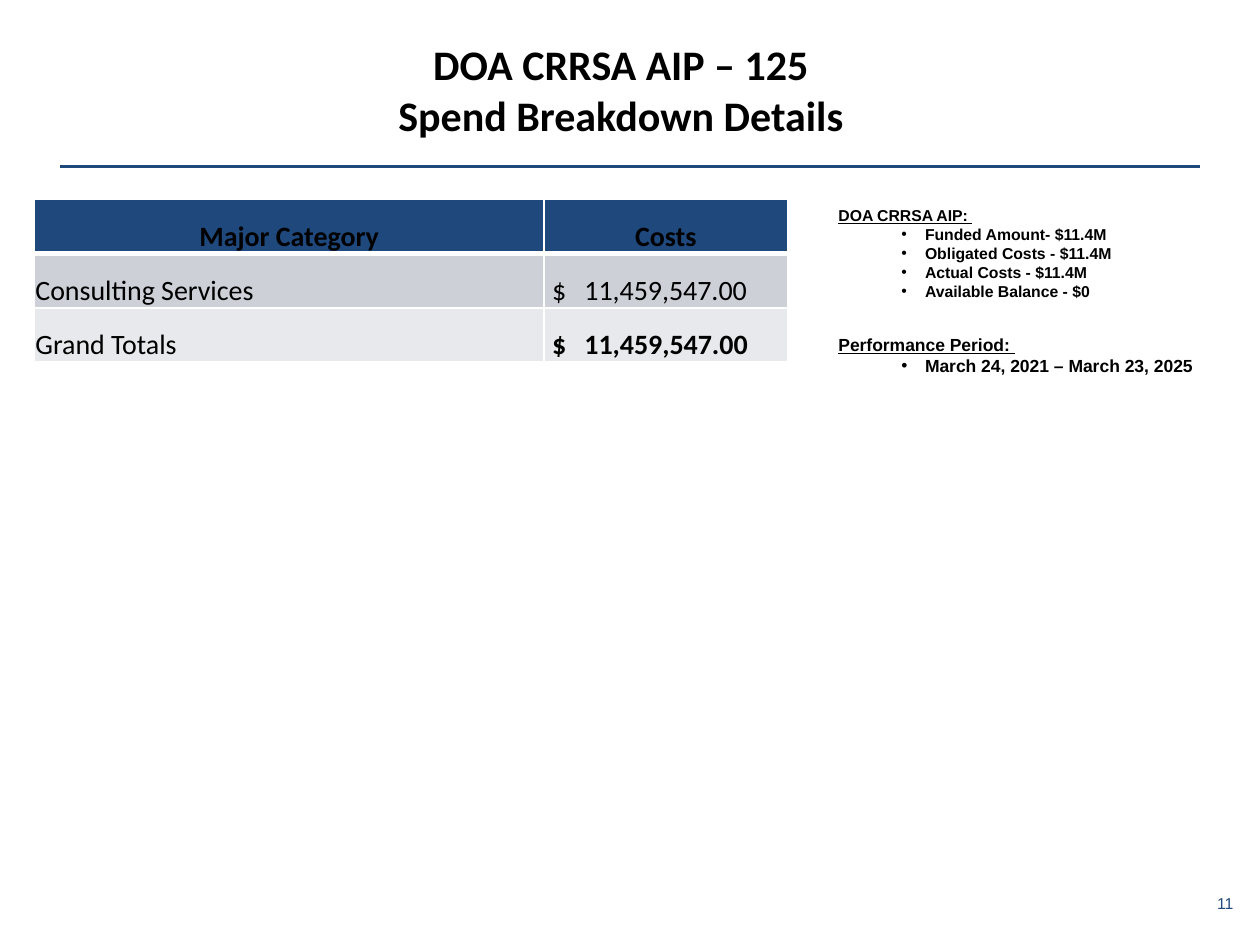
from lxml import etree
from pptx import Presentation
from pptx import util as u
from pptx.dml.color import RGBColor
from pptx.enum import shapes, text
from pptx.oxml.ns import qn

Pt = u.Pt
NAVY, BLACK, WHITE = "1F497D", "000000", "FFFFFF"
CENTER = text.PP_ALIGN.CENTER


def rgb(value):
    """Return a colour from a hex string."""
    return RGBColor.from_string(value)


def add_run(p, words, size, font="Calibri", color=BLACK, bold=False, underline=False):
    """Add one formatted run to a paragraph."""
    r = p.add_run()
    r.text = words
    f = r.font
    f.name, f.size, f.bold, f.underline = font, Pt(size), bold, underline
    f.color.rgb = rgb(color)


def set_margins(box, left, top, right, bottom):
    """Set the inner margins of a text frame or a cell."""
    box.margin_left, box.margin_top = Pt(left), Pt(top)
    box.margin_right, box.margin_bottom = Pt(right), Pt(bottom)


def add_title(s, x, y, w, h, lines):
    """Place the centred title and its lines."""
    sp = s.shapes.title
    sp.left, sp.top, sp.width, sp.height = Pt(x), Pt(y), Pt(w), Pt(h)
    tf = sp.text_frame
    tf.word_wrap = True
    tf.auto_size = text.MSO_AUTO_SIZE.NONE
    tf.vertical_anchor = text.MSO_ANCHOR.MIDDLE
    set_margins(tf, 10.8, 3.6, 7.2, 3.6)
    for i, line in enumerate(lines):
        p = tf.add_paragraph() if i else tf.paragraphs[0]
        p.alignment = CENTER
        p.space_before = Pt(0)
        add_run(p, line, 24, bold=True)


def add_rule(s, x, y, w):
    """Draw the horizontal rule under the title."""
    c = s.shapes.add_connector(shapes.MSO_CONNECTOR.STRAIGHT, Pt(x), Pt(y), Pt(x + w), Pt(y))
    c.line.color.rgb = rgb(NAVY)
    c.line.width = Pt(1.5)
    etree.SubElement(c._element.spPr, qn("a:effectLst"))


def set_borders(cell, bottom):
    """Give a cell white borders, with its own bottom width."""
    tc_pr = cell._tc.get_or_add_tcPr()
    for side, width in (("L", 1), ("R", 1), ("T", 1), ("B", bottom)):
        ln = etree.SubElement(tc_pr, qn(f"a:ln{side}"), w=str(Pt(width)))
        fill = etree.SubElement(ln, qn("a:solidFill"))
        etree.SubElement(fill, qn("a:srgbClr"), val=WHITE)


def add_tab(p, pos):
    """Add a left tab stop to a paragraph."""
    tabs = etree.SubElement(p._p.get_or_add_pPr(), qn("a:tabLst"))
    etree.SubElement(tabs, qn("a:tab"), pos=str(Pt(pos)), algn="l")


def add_cost_table(s, x, y, widths, row_h, rows):
    """Place the cost table with a header row and shaded body rows."""
    frame = s.shapes.add_table(len(rows), len(widths), Pt(x), Pt(y),
                               Pt(sum(widths)), Pt(row_h * len(rows)))
    table = frame.table
    for col, width in zip(table.columns, widths):
        col.width = Pt(width)
    for i, (fill, *cells) in enumerate(rows):
        table.rows[i].height = Pt(row_h)
        for j, (words, bold) in enumerate(cells):
            cell = table.cell(i, j)
            amount = i > 0 and j > 0
            set_margins(cell, 4.5 if amount else 0.75, 0.75, 0.75, 0)
            cell.vertical_anchor = text.MSO_ANCHOR.BOTTOM
            set_borders(cell, 1 if i else 3)
            cell.fill.solid()
            cell.fill.fore_color.rgb = rgb(fill)
            p = cell.text_frame.paragraphs[0]
            if amount:
                add_tab(p, 18.5)
            p.alignment = text.PP_ALIGN.LEFT if i else CENTER
            add_run(p, words, 16, bold=bold)


def add_facts(s, x, y, w, h, size, heading, items):
    """Place an underlined heading with bulleted facts below it."""
    tf = s.shapes.add_textbox(Pt(x), Pt(y), Pt(w), Pt(h)).text_frame
    tf.word_wrap = True
    add_run(tf.paragraphs[0], heading, size, "Arial", bold=True, underline=True)
    for item in items:
        p = tf.add_paragraph()
        p.level = 1
        p_pr = p._p.get_or_add_pPr()
        p_pr.set("marL", str(Pt(49.5)))
        p_pr.set("indent", str(Pt(-13.5)))
        etree.SubElement(p_pr, qn("a:buFont"), typeface="Arial")
        etree.SubElement(p_pr, qn("a:buChar"), char="•")
        add_run(p, item, size, "Arial", bold=True)


def add_page_number(s, x, y, w, h, number):
    """Place the page number in the corner."""
    tf = s.shapes.add_textbox(Pt(x), Pt(y), Pt(w), Pt(h)).text_frame
    tf.word_wrap = False
    set_margins(tf, 6.5, 3, 6.5, 3)
    add_run(tf.paragraphs[0], number, 9, "Arial", NAVY)


def main():
    """Build the slide and save it."""
    prs = Presentation()
    prs.slide_width, prs.slide_height = Pt(720), Pt(540)
    s = prs.slides.add_slide(prs.slide_layouts[5])
    add_rule(s, 34.5, 95, 651.5)
    add_page_number(s, 689, 507.5, 24, 17.5, "11")
    add_title(s, 19.5, 13.5, 667, 75, ["DOA CRRSA AIP – 125", "Spend Breakdown Details"])
    add_cost_table(s, 19.5, 114, (291.5, 139), 31, [
        (NAVY, ("Major Category", True), ("Costs", True)),
        ("CDD0D7", ("Consulting Services", False), ("$\t11,459,547.00", False)),
        ("E8E9EC", ("Grand Totals", False), ("$\t11,459,547.00", True)),
    ])
    add_facts(s, 472, 114, 228, 85, 9, "DOA CRRSA AIP: ", [
        "Funded Amount- $11.4M", "Obligated Costs - $11.4M",
        "Actual Costs - $11.4M", "Available Balance - $0",
    ])
    add_facts(s, 472, 187.5, 228, 55, 10, "Performance Period: ",
              ["March 24, 2021 – March 23, 2025"])
    prs.save("out.pptx")


if __name__ == "__main__":
    main()
